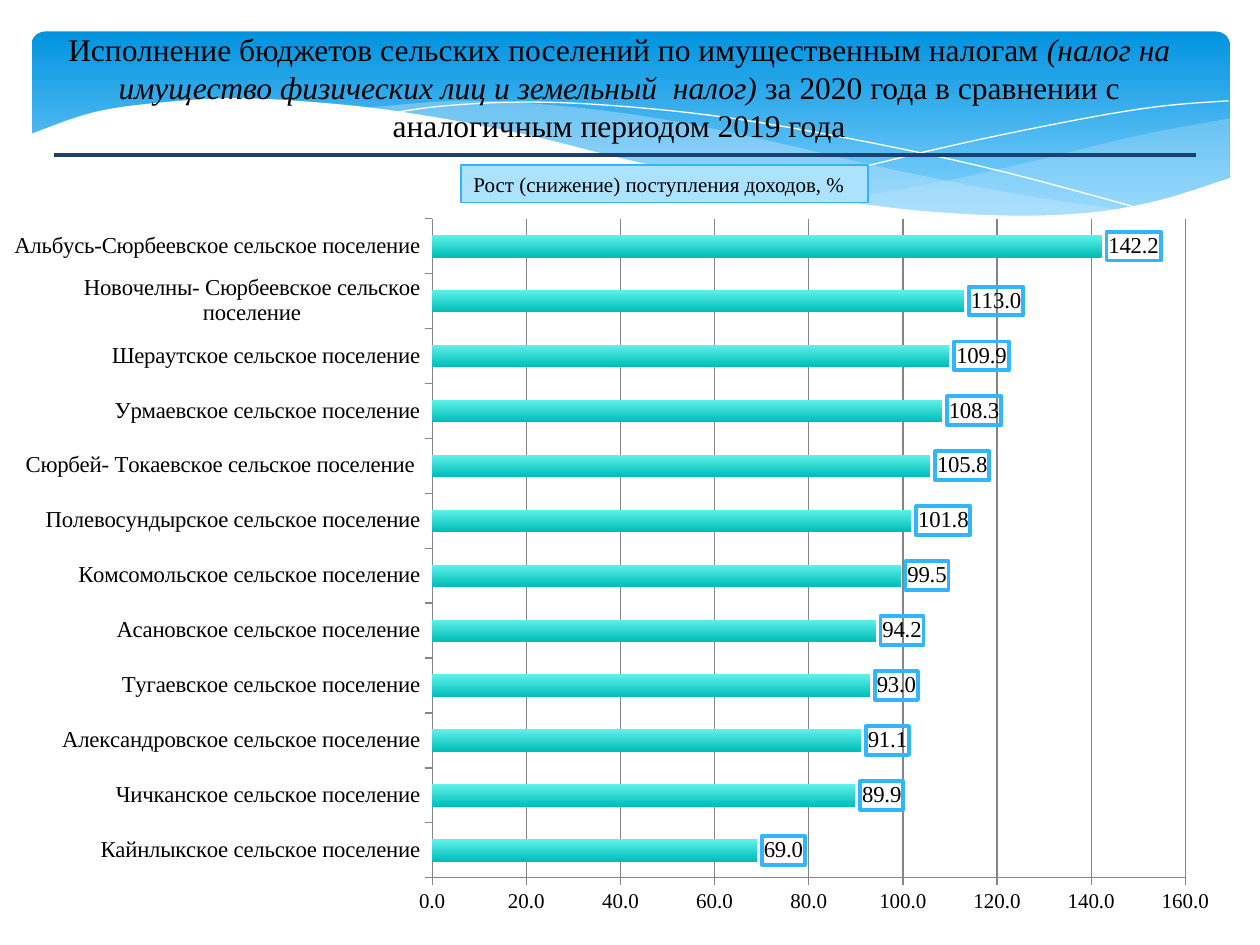
"""Build a slide comparing property tax revenue growth across rural settlements."""
import pptx
import pptx.chart.data
import pptx.dml.color
import pptx.enum.chart
import pptx.enum.shapes
import pptx.enum.text
import pptx.oxml
import pptx.oxml.ns
import pptx.util
from dataclasses import dataclass

Inches, Pt = pptx.util.Inches, pptx.util.Pt
W, H = 10, 7.5


@dataclass(frozen=True)
class Theme:
    font: str = "Times New Roman"
    text: str = "000000"
    white: str = "FFFFFF"
    sky: tuple = ("0293E0", "83D3FE")
    bar: tuple = ("5FF2EA", "00BDB8")
    wave: str = "C6E7FC"
    accent: str = "31B6FD"
    pale: str = "ADE2FE"
    rule: str = "1B4171"
    grid: str = "868686"
    title_size: int = 18
    label_size: int = 13
    small_size: int = 12


T = Theme()
TITLE = [
    ("Исполнение бюджетов сельских поселений по имущественным налогам ", False),
    ("(налог на имущество физических лиц и земельный  налог)", True),
    (" за 2020 года в сравнении с аналогичным периодом 2019 года", False),
]
CAPTION = "Рост (снижение) поступления доходов, %"
GROWTH = [
    ("Кайнлыкское сельское поселение", 69.0),
    ("Чичканское сельское поселение", 89.9),
    ("Александровское сельское поселение", 91.1),
    ("Тугаевское сельское поселение", 93.0),
    ("Асановское сельское поселение", 94.2),
    ("Комсомольское сельское поселение", 99.5),
    ("Полевосундырское сельское поселение", 101.8),
    ("Сюрбей- Токаевское сельское поселение ", 105.8),
    ("Урмаевское сельское поселение", 108.3),
    ("Шераутское сельское поселение", 109.9),
    ("Новочелны- Сюрбеевское сельское поселение", 113.0),
    ("Альбусь-Сюрбеевское сельское поселение", 142.2),
]
RIGHT_TOP = [(9.76, 0.94), (9.06, 1.07), (8.32, 1.25), (7.53, 1.43), (6.61, 1.6)]
RIGHT_LOW = [(6.61, 1.6), (7.18, 1.67), (7.81, 1.72), (8.35, 1.72), (8.89, 1.66),
             (9.35, 1.56), (9.76, 1.41)]
MID_TOP = [(8.93, 1.67), (8.07, 1.54), (7.06, 1.34), (6.29, 1.16), (5.55, 1.0),
           (4.89, 0.89), (4.2, 0.82), (3.61, 0.8), (2.86, 0.86)]
MID_LOW = [(2.86, 0.86), (3.62, 0.97), (4.49, 1.16), (5.66, 1.43), (6.5, 1.58),
           (7.36, 1.69), (8.18, 1.73), (8.93, 1.67)]
LONG_ARC = [(3.09, 0.9), (3.53, 0.84), (4.16, 0.81), (4.89, 0.84), (5.82, 0.94),
            (6.95, 1.14), (7.95, 1.36), (9.07, 1.66)]
SHORT_ARC = [(6.13, 1.51), (6.95, 1.3), (7.76, 1.11), (8.66, 0.93), (9.24, 0.84), (9.75, 0.8)]
EDGE = [(9.77, 1.41), (9.2, 1.59), (8.63, 1.69), (7.93, 1.71), (7.08, 1.65), (6.03, 1.49),
        (5.03, 1.28), (4.18, 1.07), (3.39, 0.92), (2.71, 0.83), (1.93, 0.78), (1.32, 0.81),
        (0.75, 0.89), (0.23, 1.07)]


def rgb(value):
    return pptx.dml.color.RGBColor.from_string(value)


def box(x, y, w, h):
    return [Inches(v) for v in (x, y, w, h)]


def smooth(points, steps=5):
    ends = [points[0], *points, points[-1]]
    curve = [points[0]]
    for a, b, c, d in zip(ends, ends[1:], ends[2:], ends[3:]):
        for t in (i / steps for i in range(1, steps + 1)):
            curve.append(tuple(
                q + t / 2 * (r - p + t * (2 * p - 5 * q + 4 * r - u + t * (3 * (q - r) + u - p)))
                for p, q, r, u in zip(a, b, c, d)))
    return curve


def gradient(fill, colors, end=1):
    fill.gradient()
    fill.gradient_angle = 270
    for stop, color, pos in zip(fill.gradient_stops, colors, (0, end)):
        stop.color.rgb = rgb(color)
        stop.position = pos


def style(font, size):
    font.name, font.size, font.color.rgb = T.font, Pt(size), rgb(T.text)


def curve(s, points, fill=None, alpha=100):
    pts = [(Inches(x), Inches(y)) for x, y in points]
    builder = s.shapes.build_freeform(*pts[0], scale=1.0)
    builder.add_line_segments(pts[1:], close=fill is not None)
    sp = builder.convert_to_shape()
    sp.shadow.inherit = False
    if fill is None:
        sp.fill.background()
        sp.line.color.rgb = rgb(T.white)
        sp.line.width = 0
        return
    sp.line.fill.background()
    sp.fill.solid()
    sp.fill.fore_color.rgb = rgb(fill)
    if alpha < 100:
        clr = sp._element.spPr.find(".//" + pptx.oxml.ns.qn("a:srgbClr"))
        clr.append(pptx.oxml.parse_xml(
            f'<a:alpha {pptx.oxml.ns.nsdecls("a")} val="{alpha * 1000}"/>'))


def add_banner(s):
    kind = pptx.enum.shapes.MSO_SHAPE.ROUNDED_RECTANGLE
    sp = s.shapes.add_shape(kind, *box(0.25, 0.25, 9.51, 1.56))
    sp.adjustments[0] = 0.07
    sp.shadow.inherit = False
    sp.line.fill.background()
    gradient(sp.fill, T.sky, 0.9)
    curve(s, smooth(RIGHT_TOP) + smooth(RIGHT_LOW), T.wave, 29)
    curve(s, smooth(MID_TOP) + smooth(MID_LOW), T.wave, 40)
    for arc in (LONG_ARC, SHORT_ARC):
        curve(s, smooth(arc))
    curve(s, smooth(EDGE) + [(0.23, 2.24), (9.77, 2.24)], T.white)


def add_title(s):
    tf = s.shapes.add_textbox(*box(0.35, 0.44, 9.13, 0.79)).text_frame
    tf.word_wrap = True
    tf.vertical_anchor = pptx.enum.text.MSO_ANCHOR.MIDDLE
    tf.margin_bottom = Inches(0.34)
    p = tf.paragraphs[0]
    p.alignment = pptx.enum.text.PP_ALIGN.CENTER
    for text, italic in TITLE:
        r = p.add_run()
        r.text = text
        style(r.font, T.title_size)
        r.font.italic = italic
    line = s.shapes.add_connector(
        pptx.enum.shapes.MSO_CONNECTOR.STRAIGHT, *box(0.43, 1.23, 9.49, 1.23))
    line.line.color.rgb = rgb(T.rule)
    line.line.width = Pt(2.25)
    line._element.spPr.append(
        pptx.oxml.parse_xml(f'<a:effectLst {pptx.oxml.ns.nsdecls("a")}/>'))


def add_growth_chart(s):
    data = pptx.chart.data.CategoryChartData(number_format="0.0")
    data.categories = [name for name, _ in GROWTH]
    data.add_series(CAPTION, [value for _, value in GROWTH])
    enum = pptx.enum.chart
    chart = s.shapes.add_chart(
        enum.XL_CHART_TYPE.BAR_CLUSTERED, *box(0, 1.62, 9.8, 5.75), data).chart
    chart.has_legend = chart.has_title = False
    style(chart.font, T.label_size)
    plot, cats, vals = chart.plots[0], chart.category_axis, chart.value_axis
    plot.gap_width, plot.vary_by_categories = 150, False
    gradient(plot.series[0].format.fill, T.bar)
    for axis, size in ((cats, T.label_size), (vals, T.small_size)):
        style(axis.tick_labels.font, size)
        axis.major_tick_mark = enum.XL_TICK_MARK.OUTSIDE
        axis.format.line.color.rgb = rgb(T.grid)
    vals.minimum_scale, vals.maximum_scale, vals.major_unit = 0, 160, 20
    vals.tick_labels.number_format = "0.0"
    vals.tick_labels.number_format_is_linked = False
    vals.major_gridlines.format.line.color.rgb = rgb(T.grid)
    labels = plot.series[0].data_labels
    labels.show_value = True
    labels.number_format, labels.number_format_is_linked = "0.0", False
    labels.position = enum.XL_LABEL_POSITION.OUTSIDE_END
    style(labels.font, T.label_size)
    ns = pptx.oxml.ns.nsdecls("c", "a")
    labels._element.find(pptx.oxml.ns.qn("c:numFmt")).addnext(pptx.oxml.parse_xml(
        f'<c:spPr {ns}><a:noFill/><a:ln w="{Pt(2.25)}"><a:solidFill>'
        f'<a:srgbClr val="{T.accent}"/></a:solidFill></a:ln></c:spPr>'))
    area = chart._chartSpace.chart.plotArea
    for old in area.findall(pptx.oxml.ns.qn("c:layout")):
        area.remove(old)
    place = "".join(f'<c:{k} val="{v}"/>' for k, v in (
        ("layoutTarget", "inner"), ("xMode", "edge"), ("yMode", "edge"),
        ("x", 0.35), ("y", 0.02), ("w", 0.61), ("h", 0.91)))
    area.insert(0, pptx.oxml.parse_xml(
        f'<c:layout {ns}><c:manualLayout>{place}</c:manualLayout></c:layout>'))


def add_caption(s):
    sp = s.shapes.add_shape(pptx.enum.shapes.MSO_SHAPE.RECTANGLE, *box(3.66, 1.31, 3.23, 0.3))
    sp.shadow.inherit = False
    sp.fill.solid()
    sp.fill.fore_color.rgb = rgb(T.pale)
    sp.line.color.rgb, sp.line.width = rgb(T.accent), Pt(0.75)
    tf = sp.text_frame
    tf.word_wrap = True
    tf.text = CAPTION
    tf.paragraphs[0].alignment = pptx.enum.text.PP_ALIGN.LEFT
    style(tf.paragraphs[0].runs[0].font, T.small_size)


def main():
    prs = pptx.Presentation()
    prs.slide_width, prs.slide_height = Inches(W), Inches(H)
    s = prs.slides.add_slide(prs.slide_layouts[6])
    for add in (add_banner, add_title, add_growth_chart, add_caption):
        add(s)
    prs.save("out.pptx")


if __name__ == "__main__":
    main()
